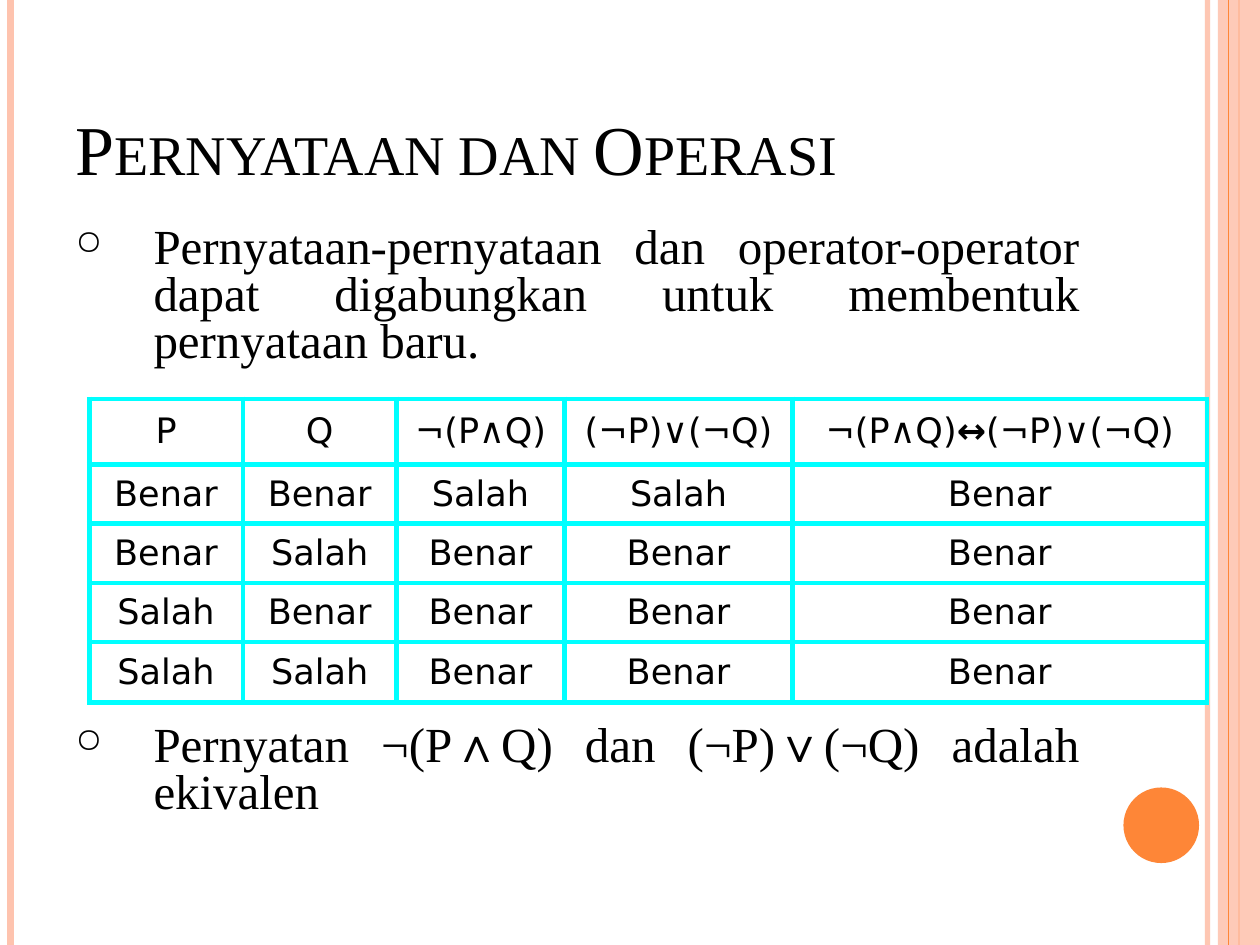
"""Build the slide on statements and operators with its truth table."""
from lxml.etree import SubElement
from pptx import Presentation
from pptx.dml.color import RGBColor as RGB
from pptx.enum.shapes import MSO_CONNECTOR as CONN, MSO_SHAPE as SHAPE
from pptx.enum.text import MSO_ANCHOR as ANCHOR, PP_ALIGN as ALIGN
from pptx.oxml.ns import qn
from pptx.util import Inches, Pt

C = {"pink": "FEC3AE", "orange": "FE8637", "cyan": "00FFFF", "black": "000000"}
SERIF, SANS = "Times New Roman", "DejaVu Sans"

prs = Presentation()
prs.slide_width, prs.slide_height = Inches(10), Inches(7.5)
U = prs.slide_width // 120
ROWS = 90
s = prs.slides.add_slide(prs.slide_layouts[6])


def grid(*units):
    return [round(u * U) for u in units]


def style(font, name, size):
    font.name, font.size = name, Pt(size)
    font.color.rgb = RGB.from_string(C["black"])


band = s.shapes.add_shape(SHAPE.RECTANGLE, *grid(116, 0, 4, ROWS))
dot = s.shapes.add_shape(SHAPE.OVAL, *grid(107, 75, 7.2, 7.2))
for sp, color in ((band, "pink"), (dot, "orange")):
    sp.shadow.inherit = False
    sp.fill.solid()
    sp.fill.fore_color.rgb = RGB.from_string(C[color])
    sp.line.fill.background()

lines = {}
for col, color, width in ((115, "pink", 3), (1, "pink", 4.5),
                          (118, "orange", 1.5), (117, "orange", 0.75)):
    line = s.shapes.add_connector(CONN.STRAIGHT, *grid(col, 0, col, ROWS))
    line.line.color.rgb = RGB.from_string(C[color])
    line.line.width = Pt(width)
    SubElement(line._element.spPr, qn("a:effectLst"))
    lines[col] = line
lines[118].begin_connect(band, 0)
lines[118].end_connect(band, 2)
for sp in (band, lines[117], dot):
    s.shapes._spTree.append(sp._element)
for sp, alpha in ((band, 87), (lines[115], 93)):
    clr = next(sp._element.spPr.iter(qn("a:srgbClr")))
    SubElement(clr, qn("a:alpha"), val=str(alpha * 1000))

tf = s.shapes.add_textbox(*grid(6, 3.6, 98, 15)).text_frame
tf.word_wrap = True
tf.vertical_anchor = ANCHOR.BOTTOM
tf.text = "Pernyataan dan Operasi"
r = tf.paragraphs[0].runs[0]
style(r.font, SERIF, 40)
r.font._element.set("cap", "small")

tf = s.shapes.add_textbox(*grid(6, 21, 98, 64)).text_frame
tf.word_wrap = True
tf.text = ("Pernyataan-pernyataan dan operator-operator dapat digabungkan "
           "untuk membentuk pernyataan baru.\n"
           "Pernyatan ¬(P∧Q) dan (¬P)∨(¬Q) adalah ekivalen")
for p in tf.paragraphs:
    p.alignment, p.line_spacing = ALIGN.JUSTIFY, 0.8
    pPr = p._p.get_or_add_pPr()
    indent = Inches(0.62)
    pPr.set("marL", str(indent))
    pPr.set("indent", str(-indent))
    SubElement(pPr, qn("a:buSzPct"), val="70000")
    SubElement(pPr, qn("a:buChar"), char="○")
    style(p.runs[0].font, SERIF, 28)
tf.paragraphs[1].space_before = Pt(204)

cols = (14.64, 14.64, 16, 21.72, 39.48)
rows = (6.24, 5.64, 5.64, 5.64, 5.76)
B, S = "Benar", "Salah"
data = (("P", "Q", "¬(P∧Q)", "(¬P)∨(¬Q)", "¬(P∧Q)↔(¬P)∨(¬Q)"),
        (B, B, S, S, B), (B, S, B, B, B), (S, B, B, B, B), (S, S, B, B, B))
table = s.shapes.add_table(len(rows), len(cols),
                           *grid(8.5, 38, sum(cols), sum(rows))).table
table.first_row = table.horz_banding = False
for column, width in zip(table.columns, grid(*cols)):
    column.width = width
for row, height, texts in zip(table.rows, grid(*rows), data):
    row.height = height
    for cell, text in zip(row.cells, texts):
        cell.vertical_anchor = ANCHOR.MIDDLE
        p = cell.text_frame.paragraphs[0]
        p.alignment = ALIGN.CENTER
        for part in text.replace("↔", "|↔|").split("|"):
            r = p.add_run()
            r.text = part
            style(r.font, SANS, 20)
            r.font.bold = part == "↔"
        tcPr = cell._tc.get_or_add_tcPr()
        for side in ("lnL", "lnR", "lnT", "lnB"):
            ln = SubElement(tcPr, qn("a:" + side), w=str(Pt(3)))
            fill = SubElement(ln, qn("a:solidFill"))
            SubElement(fill, qn("a:srgbClr"), val=C["cyan"])
        cell.fill.background()

prs.save("out.pptx")
